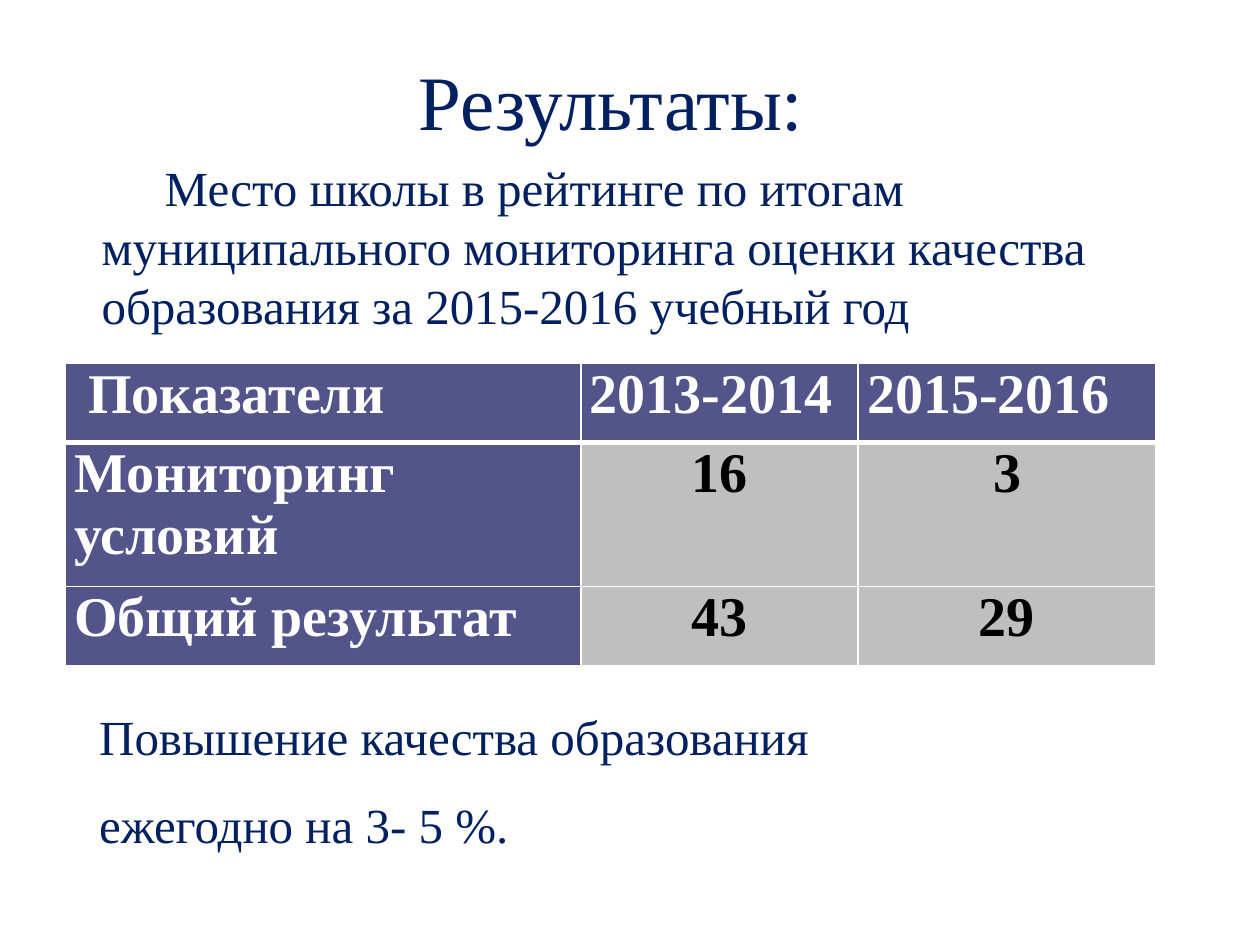
"""Build the slide with the school's monitoring results."""
from dataclasses import dataclass
from typing import Any

from lxml import etree
from pptx import Presentation
from pptx import util as u
from pptx.dml.color import RGBColor
from pptx.enum import text
from pptx.oxml.ns import qn


@dataclass(frozen=True)
class Theme:
    font: str = "Times New Roman"
    navy: str = "002060"
    violet: str = "53548A"
    grey: str = "BFBFBF"
    white: str = "FFFFFF"
    black: str = "000000"
    title: int = 44
    body: int = 28
    cell: int = 32
    thin: int = 1
    thick: int = 3


@dataclass(frozen=True)
class Block:
    lines: tuple[str, ...]
    left: float
    top: float
    width: float
    height: float
    size: int
    align: Any = text.PP_ALIGN.LEFT
    spacing: float = 1.0
    indent: float = 0
    inset_top: float = 0.13


T = Theme()
BLOCKS = (
    Block(("Результаты:",), 0.89, 0.94, 22.86, 2.01, T.title, text.PP_ALIGN.CENTER),
    Block(("Место школы в рейтинге по итогам муниципального мониторинга оценки "
           "качества образования за 2015-2016 учебный год",),
          1.8, 2.95, 22.25, 5.38, T.body, indent=1.27, inset_top=0.23),
    Block(("Повышение качества образования", "ежегодно на 3- 5 %."),
          1.75, 13.51, 19.51, 3.63, T.body, spacing=1.5),
)
ROWS = (
    (" Показатели", "2013-2014", "2015-2016"),
    ("Мониторинг\nусловий", "16", "3"),
    ("Общий результат", "43", "29"),
)
COL_WIDTHS = (10.39, 5.59, 6.0)
ROW_HEIGHTS = (1.6, 2.9, 1.6)


def set_all(target: Any, values: dict[str, Any]) -> None:
    """Set every named attribute on the target."""
    for name, value in values.items():
        setattr(target, name, value)


def write(tf: Any, lines: tuple[str, ...], size: int, color: str, para: dict[str, Any],
          bold: bool = False, indent: float = 0) -> None:
    """Write one formatted paragraph per line into a text frame."""
    for i, line in enumerate(lines):
        p = tf.paragraphs[0] if i == 0 else tf.add_paragraph()
        set_all(p, para)
        if indent:
            p._p.get_or_add_pPr().set("indent", str(u.Cm(indent)))
        r = p.add_run()
        r.text = line
        set_all(r.font, {"name": T.font, "size": u.Pt(size), "bold": bold})
        r.font.color.rgb = RGBColor.from_string(color)


def add_block(s: Any, b: Block) -> None:
    """Add a wrapped text box."""
    tf = s.shapes.add_textbox(*map(u.Cm, (b.left, b.top, b.width, b.height))).text_frame
    set_all(tf, {"word_wrap": True, "margin_top": u.Cm(b.inset_top),
                 "vertical_anchor": text.MSO_ANCHOR.TOP})
    write(tf, b.lines, b.size, T.navy,
          {"alignment": b.align, "line_spacing": b.spacing}, indent=b.indent)


def set_borders(cell: Any, widths: dict[str, int]) -> None:
    """Draw white borders of the given point widths ahead of the cell fill."""
    tc_pr = cell._tc.get_or_add_tcPr()
    for i, (side, width) in enumerate(widths.items()):
        ln = etree.Element(qn(f"a:ln{side}"), w=str(u.Pt(width)))
        fill = etree.SubElement(ln, qn("a:solidFill"))
        etree.SubElement(fill, qn("a:srgbClr"), val=T.white)
        tc_pr.insert(i, ln)


def add_results(s: Any) -> None:
    """Add the table of ratings by year."""
    table = s.shapes.add_table(
        len(ROWS), len(COL_WIDTHS), u.Cm(1.32), u.Cm(7.32),
        u.Cm(sum(COL_WIDTHS)), u.Cm(sum(ROW_HEIGHTS))).table
    for column, width in zip(table.columns, COL_WIDTHS):
        column.width = u.Cm(width)
    for row, height in zip(table.rows, ROW_HEIGHTS):
        row.height = u.Cm(height)
    for i, values in enumerate(ROWS):
        for j, value in enumerate(values):
            cell = table.cell(i, j)
            label = i == 0 or j == 0
            set_all(cell, {"margin_left": u.Cm(0.18), "margin_right": u.Cm(0.18),
                           "margin_top": 0, "margin_bottom": 0})
            cell.fill.solid()
            cell.fill.fore_color.rgb = RGBColor.from_string(T.violet if label else T.grey)
            set_borders(cell, {"L": T.thin, "R": T.thin,
                               "T": T.thick if i == 1 else T.thin,
                               "B": T.thick if i == 0 else T.thin})
            align = text.PP_ALIGN.LEFT if label else text.PP_ALIGN.CENTER
            write(cell.text_frame, tuple(value.split("\n")), T.cell,
                  T.white if label else T.black, {"alignment": align}, bold=True)


def main() -> None:
    """Create and save the presentation."""
    prs = Presentation()
    set_all(prs, {"slide_width": u.Cm(25.4), "slide_height": u.Cm(19.05)})
    s = prs.slides.add_slide(prs.slide_layouts[6])
    add_results(s)
    for block in BLOCKS:
        add_block(s, block)
    prs.save("out.pptx")


if __name__ == "__main__":
    main()
